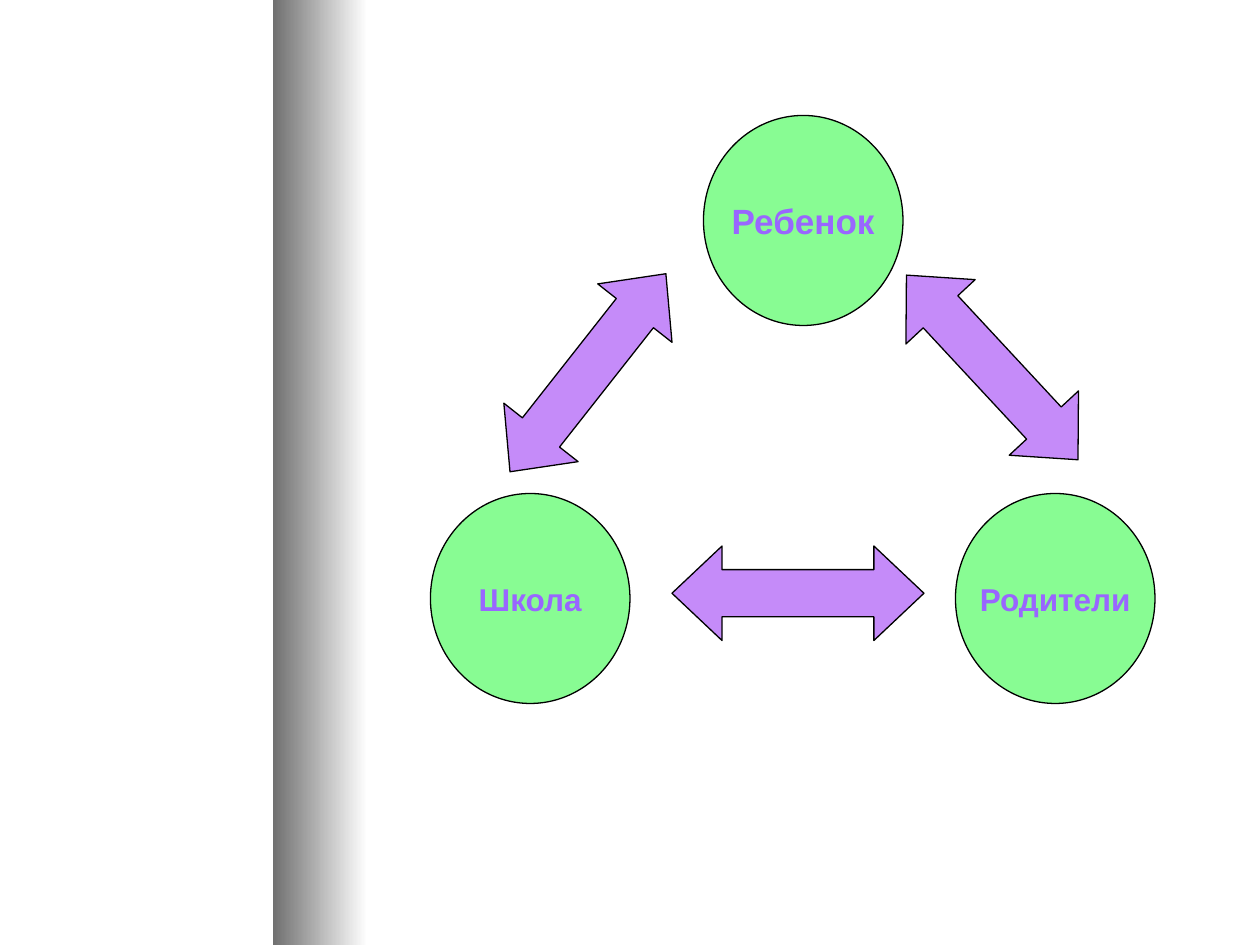
from pptx import Presentation
from pptx import util as u
from pptx.dml.color import RGBColor
from pptx.enum import shapes, text

COLORS = {"band_dark": "707070", "paper": "FFFFFF", "circle": "88FC93",
          "arrow": "C58BF9", "outline": "000000", "label": "9966FF"}
COLUMNS, ROWS = 120, 90
CIRCLE_SIZE = (19, 20)
ARROW_SIZE = (24, 9)
CIRCLES = [("Ребенок", 67, 11, 20), ("Родители", 91, 47, 18), ("Школа", 41, 47, 18)]
ARROWS = [(64, 52, 0), (82.5, 30.5, 47.1), (44, 31, 308.2)]


class TriangleSlide:
    """Draws a triangle of circles and arrows on a grid of columns and rows."""

    def __init__(self, presentation):
        self.column = presentation.slide_width / COLUMNS
        self.row = presentation.slide_height / ROWS
        self.slide = presentation.slides.add_slide(presentation.slide_layouts[6])

    def color(self, name):
        return RGBColor.from_string(COLORS[name])

    def add(self, kind, left, top, width, height):
        shape = self.slide.shapes.add_shape(
            kind, round(left * self.column), round(top * self.row),
            round(width * self.column), round(height * self.row))
        shape.shadow.inherit = False
        return shape

    def outlined(self, kind, left, top, size, fill):
        shape = self.add(kind, left, top, *size)
        shape.fill.solid()
        shape.fill.fore_color.rgb = self.color(fill)
        shape.line.color.rgb = self.color("outline")
        shape.line.width = u.Pt(0.75)
        return shape

    def band(self, left, width):
        shape = self.add(shapes.MSO_SHAPE.RECTANGLE, left, 0, width, ROWS)
        shape.line.fill.background()
        shape.fill.gradient()
        shape.fill.gradient_angle = 0
        for stop, name in zip(shape.fill.gradient_stops, ("band_dark", "paper")):
            stop.color.rgb = self.color(name)

    def circle(self, label, left, top, size):
        shape = self.outlined(shapes.MSO_SHAPE.OVAL, left, top, CIRCLE_SIZE, "circle")
        frame = shape.text_frame
        frame.word_wrap = False
        frame.vertical_anchor = text.MSO_ANCHOR.MIDDLE
        paragraph = frame.paragraphs[0]
        paragraph.alignment = text.PP_ALIGN.CENTER
        run = paragraph.add_run()
        run.text = label
        for name, value in {"name": "Arial", "size": u.Pt(size), "bold": True}.items():
            setattr(run.font, name, value)
        run.font.color.rgb = self.color("label")

    def arrow(self, left, top, rotation):
        shape = self.outlined(shapes.MSO_SHAPE.LEFT_RIGHT_ARROW, left, top,
                              ARROW_SIZE, "arrow")
        shape.adjustments[0] = 0.5
        shape.adjustments[1] = 0.53
        shape.rotation = rotation


def main():
    presentation = Presentation()
    presentation.slide_width = u.Inches(10)
    presentation.slide_height = u.Inches(7.5)
    page = TriangleSlide(presentation)
    page.band(26, 9)
    for circle in CIRCLES:
        page.circle(*circle)
    for arrow in ARROWS:
        page.arrow(*arrow)
    presentation.save("out.pptx")


if __name__ == "__main__":
    main()
